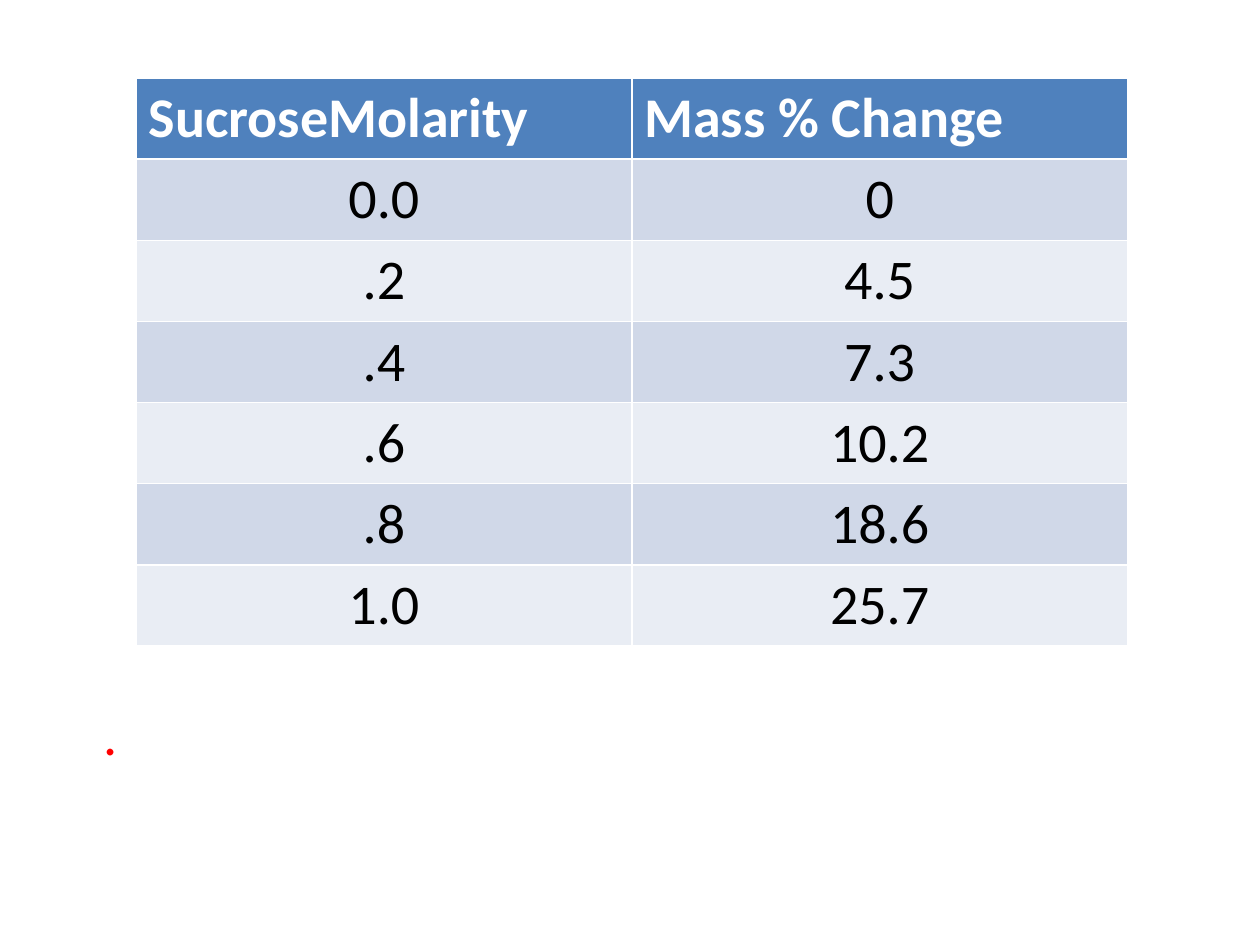
from pptx import Presentation
from pptx.dml.color import RGBColor
from pptx.enum.text import MSO_AUTO_SIZE as AutoSize, PP_ALIGN as Align
from pptx.util import Inches, Pt

FONT, SIZE = "Calibri", 32
HEADER_FILL, BAND_FILLS = "4F81BD", ("E9EDF4", "D0D8E8")
ROWS = [
    ("SucroseMolarity", "Mass % Change"),
    ("0.0", "0"),
    (".2", "4.5"),
    (".4", "7.3"),
    (".6", "10.2"),
    (".8", "18.6"),
    ("1.0", "25.7"),
]


def color(hex_code):
    return RGBColor.from_string(hex_code)


def write(text_frame, text, hex_code, bold=False, align=Align.LEFT):
    text_frame.text = text
    para = text_frame.paragraphs[0]
    para.alignment = align
    font = para.runs[0].font
    font.name, font.size, font.bold = FONT, Pt(SIZE), bold
    font.color.rgb = color(hex_code)


def add_results_table(page, box):
    table = page.shapes.add_table(len(ROWS), len(ROWS[0]), *map(Inches, box)).table
    for row, values in enumerate(ROWS):
        is_header = row == 0
        for column, value in enumerate(values):
            cell = table.cell(row, column)
            cell.fill.solid()
            cell.fill.fore_color.rgb = color(HEADER_FILL if is_header else BAND_FILLS[row % 2])
            if is_header:
                write(cell.text_frame, value, "FFFFFF", bold=True)
            else:
                write(cell.text_frame, value, "000000", align=Align.CENTER)


def add_note(page, box):
    text_frame = page.shapes.add_textbox(*map(Inches, box)).text_frame
    text_frame.word_wrap = True
    text_frame.auto_size = AutoSize.SHAPE_TO_FIT_TEXT
    write(text_frame, ".", "FF0000")


def main():
    deck = Presentation()
    deck.slide_width, deck.slide_height = Inches(10), Inches(7.5)
    page = deck.slides.add_slide(deck.slide_layouts[6])
    add_results_table(page, (1.08, 0.62, 7.87, 4.43))
    add_note(page, (0.72, 5.5, 8.77, 0.64))
    deck.save("out.pptx")


if __name__ == "__main__":
    main()
